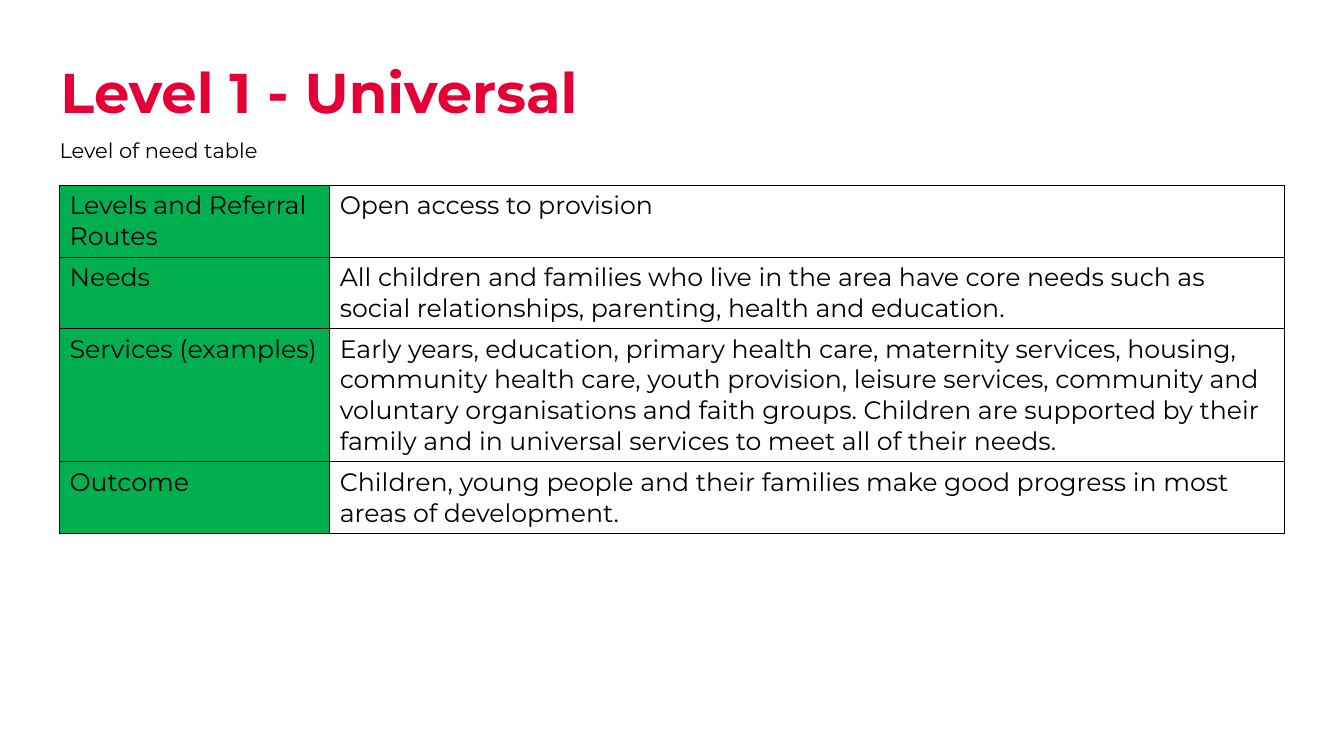
from lxml.etree import SubElement
from pptx import Presentation
from pptx.dml.color import RGBColor
from pptx.enum.text import MSO_ANCHOR, MSO_AUTO_SIZE, PP_ALIGN
from pptx.oxml.ns import qn
from pptx.util import Inches, Pt

RED = RGBColor(0xE4, 0x00, 0x37)
GREEN = RGBColor(0x00, 0xB0, 0x50)
BLACK = RGBColor(0x00, 0x00, 0x00)

COLUMN_WIDTHS = (2.68, 9.47)
# Row height, label, description
LEVEL_ROWS = [
    (0.71, "Levels and Referral\nRoutes", "Open access to provision"),
    (0.71, "Needs",
     "All children and families who live in the area have core needs such as "
     "social relationships, parenting, health and education."),
    (1.32, "Services (examples)",
     "Early years, education, primary health care, maternity services, housing, "
     "community health care, youth provision, leisure services, community and "
     "voluntary organisations and faith groups. Children are supported by their "
     "family and in universal services to meet all of their needs."),
    (0.71, "Outcome",
     "Children, young people and their families make good progress in most "
     "areas of development."),
]


class SlideBuilder:
    """Holds the text style and the current slide."""

    font_name = "Montserrat"
    border_width = Pt(1)

    def __init__(self, presentation):
        self.slide = presentation.slides.add_slide(presentation.slide_layouts[5])

    def set_text(self, text_frame, text, size, color=BLACK, bold=False):
        text_frame.text = text
        font_format = {"name": self.font_name, "size": Pt(size), "bold": bold}
        for paragraph in text_frame.paragraphs:
            paragraph.alignment = PP_ALIGN.LEFT
            for run in paragraph.runs:
                for attribute, value in font_format.items():
                    setattr(run.font, attribute, value)
                run.font.color.rgb = color

    def fill_box(self, shape, box, text, **style):
        position = dict(zip(("left", "top", "width", "height"), map(Inches, box)))
        for attribute, value in position.items():
            setattr(shape, attribute, value)
        frame_format = {
            "margin_left": 0, "margin_right": 0, "margin_top": 0, "margin_bottom": 0,
            "word_wrap": True, "auto_size": MSO_AUTO_SIZE.NONE,
            "vertical_anchor": MSO_ANCHOR.TOP,
        }
        for attribute, value in frame_format.items():
            setattr(shape.text_frame, attribute, value)
        self.set_text(shape.text_frame, text, **style)

    def title(self, box, text, **style):
        self.fill_box(self.slide.shapes.title, box, text, **style)

    def text(self, box, text, **style):
        shape = self.slide.shapes.add_textbox(*map(Inches, box))
        self.fill_box(shape, box, text, **style)

    def set_borders(self, cell):
        properties = cell._tc.get_or_add_tcPr()
        for index, side in enumerate(("a:lnL", "a:lnR", "a:lnT", "a:lnB")):
            line = SubElement(properties, qn(side), w=str(self.border_width))
            properties.insert(index, line)
            fill = SubElement(line, qn("a:solidFill"))
            SubElement(fill, qn("a:srgbClr"), val=str(BLACK))

    def table(self, left, top, widths, rows, size):
        heights = [row[0] for row in rows]
        frame = self.slide.shapes.add_table(
            len(rows), len(widths), Inches(left), Inches(top),
            Inches(sum(widths)), Inches(sum(heights)))
        table = frame.table
        for column, width in zip(table.columns, widths):
            column.width = Inches(width)
        for table_row, (height, *texts) in zip(table.rows, rows):
            table_row.height = Inches(height)
            for index, (cell, text) in enumerate(zip(table_row.cells, texts)):
                self.set_text(cell.text_frame, text, size)
                if index == 0:
                    cell.fill.solid()
                    cell.fill.fore_color.rgb = GREEN
                else:
                    cell.fill.background()
                self.set_borders(cell)


def main():
    presentation = Presentation()
    presentation.slide_width = Inches(13.33)
    presentation.slide_height = Inches(7.5)
    builder = SlideBuilder(presentation)

    # Heading
    builder.title((0.6, 0.57, 8.1, 0.67), "Level 1 - Universal",
                  size=40, color=RED, bold=True)
    builder.text((0.59, 1.36, 10.02, 0.4), "Level of need table", size=15)

    # Level of need table
    builder.table(0.59, 1.84, COLUMN_WIDTHS, LEVEL_ROWS, size=18)

    presentation.save("out.pptx")


if __name__ == "__main__":
    main()
